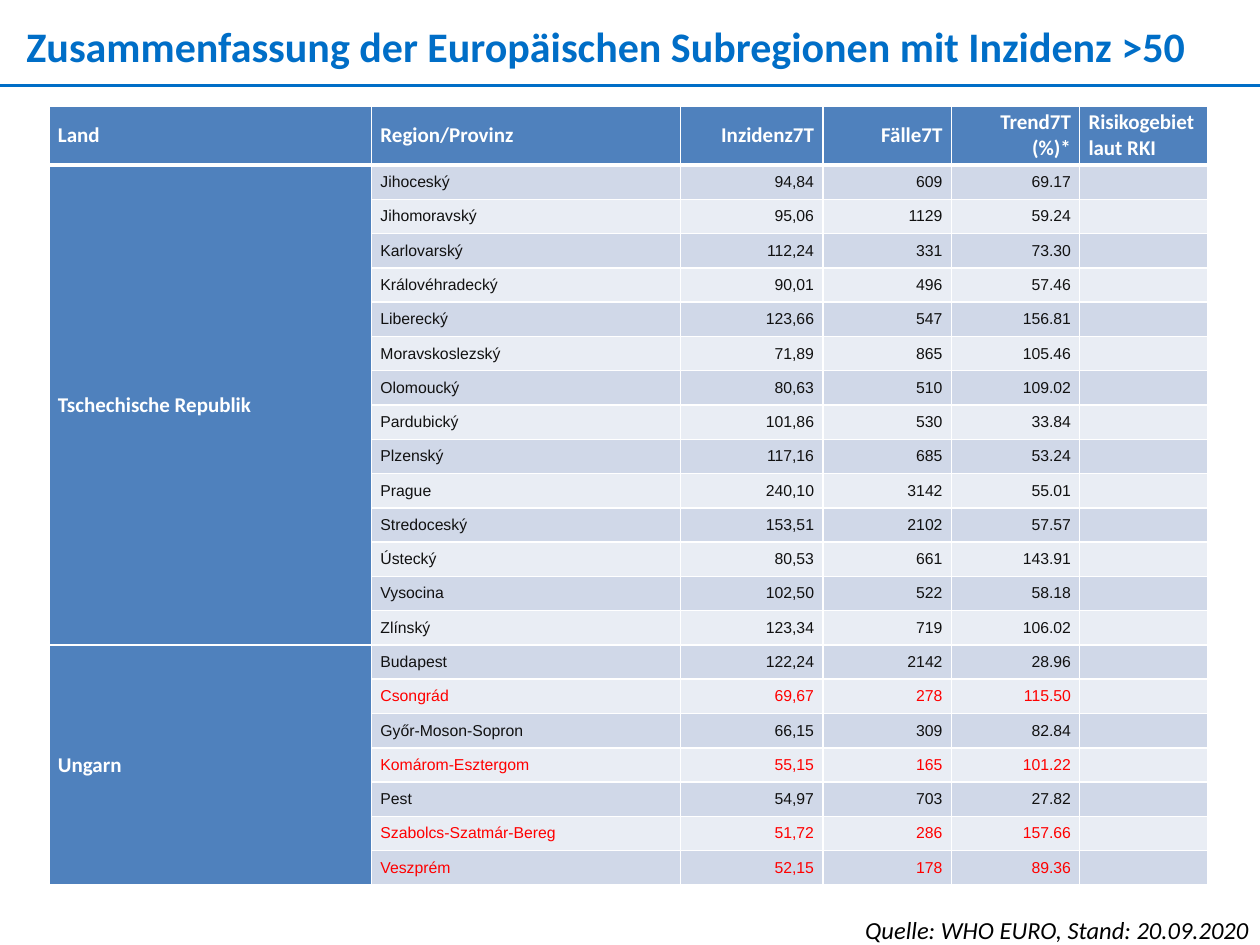
from lxml.etree import SubElement
from pptx import Presentation
from pptx.dml.color import RGBColor
from pptx.enum.shapes import MSO_CONNECTOR
from pptx.enum.text import MSO_ANCHOR, PP_ALIGN
from pptx.oxml.ns import qn
from pptx.util import Inches, Pt

COLORS = {
    "title": "006EC7",
    "header": "4F81BD",
    "odd": "D0D8E8",
    "even": "E9EDF4",
    "white": "FFFFFF",
    "text": "111111",
    "alert": "FF0000",
    "black": "000000",
}
HEADERS = ["Land", "Region/Provinz", "Inzidenz7T", "Fälle7T", "Trend7T (%)*",
           "Risikogebiet laut RKI"]
COLUMN_WIDTHS = [2.56, 2.45, 1.13, 1.02, 1.02, 1.02]
NUMBER_COLUMNS = (2, 3, 4)
COUNTRIES = {
    "Tschechische Republik": [
        ("Jihoceský", "94,84", "609", "69.17"),
        ("Jihomoravský", "95,06", "1129", "59.24"),
        ("Karlovarský", "112,24", "331", "73.30"),
        ("Královéhradecký", "90,01", "496", "57.46"),
        ("Liberecký", "123,66", "547", "156.81"),
        ("Moravskoslezský", "71,89", "865", "105.46"),
        ("Olomoucký", "80,63", "510", "109.02"),
        ("Pardubický", "101,86", "530", "33.84"),
        ("Plzenský", "117,16", "685", "53.24"),
        ("Prague", "240,10", "3142", "55.01"),
        ("Stredoceský", "153,51", "2102", "57.57"),
        ("Ústecký", "80,53", "661", "143.91"),
        ("Vysocina", "102,50", "522", "58.18"),
        ("Zlínský", "123,34", "719", "106.02"),
    ],
    "Ungarn": [
        ("Budapest", "122,24", "2142", "28.96"),
        ("Csongrád", "69,67", "278", "115.50"),
        ("Győr-Moson-Sopron", "66,15", "309", "82.84"),
        ("Komárom-Esztergom", "55,15", "165", "101.22"),
        ("Pest", "54,97", "703", "27.82"),
        ("Szabolcs-Szatmár-Bereg", "51,72", "286", "157.66"),
        ("Veszprém", "52,15", "178", "89.36"),
    ],
}
ALERT_REGIONS = {"Csongrád", "Komárom-Esztergom", "Szabolcs-Szatmár-Bereg", "Veszprém"}


def rgb(name):
    return RGBColor.from_string(COLORS[name])


def add_run(p, text, size, color, font="Calibri", bold=False, italic=False):
    r = p.add_run()
    r.text = text
    r.font.name = font
    r.font.size = Pt(size)
    r.font.bold = bold
    r.font.italic = italic
    r.font.color.rgb = rgb(color)


def add_title(s, left, top, width, height):
    sp = s.shapes.title
    sp.left, sp.top, sp.width, sp.height = left, top, width, height
    tf = sp.text_frame
    tf.margin_left = tf.margin_right = tf.margin_top = tf.margin_bottom = 0
    tf.vertical_anchor = MSO_ANCHOR.TOP
    p = tf.paragraphs[0]
    p.alignment = PP_ALIGN.LEFT
    add_run(p, "Zusammenfassung der Europäischen Subregionen mit Inzidenz >50",
            24, "title", bold=True)


def add_rule(s, left, top, width):
    line = s.shapes.add_connector(MSO_CONNECTOR.STRAIGHT, left, top, left + width, top)
    line.line.color.rgb = rgb("title")
    line.line.width = Pt(1.5)
    SubElement(line._element.spPr, qn("a:effectLst"))


def add_source(s, left, top, width, height):
    tf = s.shapes.add_textbox(left, top, width, height).text_frame
    tf.word_wrap = True
    p = tf.paragraphs[0]
    p.alignment = PP_ALIGN.RIGHT
    add_run(p, "Quelle: WHO EURO, Stand: 20.09.2020", 14, "black", italic=True)


def set_borders(cell, top, bottom):
    tcPr = cell._tc.get_or_add_tcPr()
    for side, width in (("L", 1), ("R", 1), ("T", top), ("B", bottom)):
        ln = SubElement(tcPr, qn(f"a:ln{side}"), w=str(Pt(width)))
        fill = SubElement(ln, qn("a:solidFill"))
        SubElement(fill, qn("a:srgbClr"), val=COLORS["white"])


def format_cell(cell, row, col):
    set_borders(cell, 3 if row == 1 else 1, 3 if row == 0 else 1)
    cell.fill.solid()
    band = "odd" if row % 2 else "even"
    cell.fill.fore_color.rgb = rgb("header" if row == 0 or col == 0 else band)
    cell.margin_left = cell.margin_right = Inches(0.07)
    cell.margin_top = cell.margin_bottom = 0
    cell.vertical_anchor = MSO_ANCHOR.MIDDLE
    p = cell.text_frame.paragraphs[0]
    p.space_before = p.space_after = Pt(2)
    p.alignment = PP_ALIGN.RIGHT if col in NUMBER_COLUMNS else PP_ALIGN.LEFT
    return p


def add_region_table(s, left, top, width, height):
    row_count = 1 + sum(len(regions) for regions in COUNTRIES.values())
    table = s.shapes.add_table(row_count, len(HEADERS), left, top, width, height).table
    table.horz_banding = False
    for column, column_width in zip(table.columns, COLUMN_WIDTHS):
        column.width = Inches(column_width)
    header_height = Inches(0.47)
    for i, row in enumerate(table.rows):
        row.height = header_height if i == 0 else int((height - header_height) / (row_count - 1))

    paragraphs = [[format_cell(table.cell(i, j), i, j) for j in range(len(HEADERS))]
                  for i in range(row_count)]
    for p, header in zip(paragraphs[0], HEADERS):
        add_run(p, header, 12, "white", bold=True)

    first = 1
    for country, regions in COUNTRIES.items():
        last = first + len(regions) - 1
        add_run(paragraphs[first][0], country, 12, "white", bold=True)
        for i, region in enumerate(regions, first):
            color = "alert" if region[0] in ALERT_REGIONS else "text"
            for p, value in zip(paragraphs[i][1:], region):
                add_run(p, value, 9, color, font="Arial")
        table.cell(first, 0).merge(table.cell(last, 0))
        first = last + 1

    for row in paragraphs:
        for p in row:
            if not p.runs:
                SubElement(p._p, qn("a:endParaRPr"), sz="900")


def main():
    prs = Presentation()
    prs.slide_width, prs.slide_height = Inches(10), Inches(7.5)
    s = prs.slides.add_slide(prs.slide_layouts[5])
    add_title(s, Inches(0.21), Inches(0.16), Inches(9.63), Inches(0.4))
    add_rule(s, 0, Inches(0.68), prs.slide_width)
    add_source(s, Inches(5.39), Inches(7.21), Inches(4.62), Inches(0.34))
    add_region_table(s, Inches(0.39), Inches(0.84), Inches(sum(COLUMN_WIDTHS)), Inches(6.19))
    prs.save("out.pptx")


if __name__ == "__main__":
    main()
